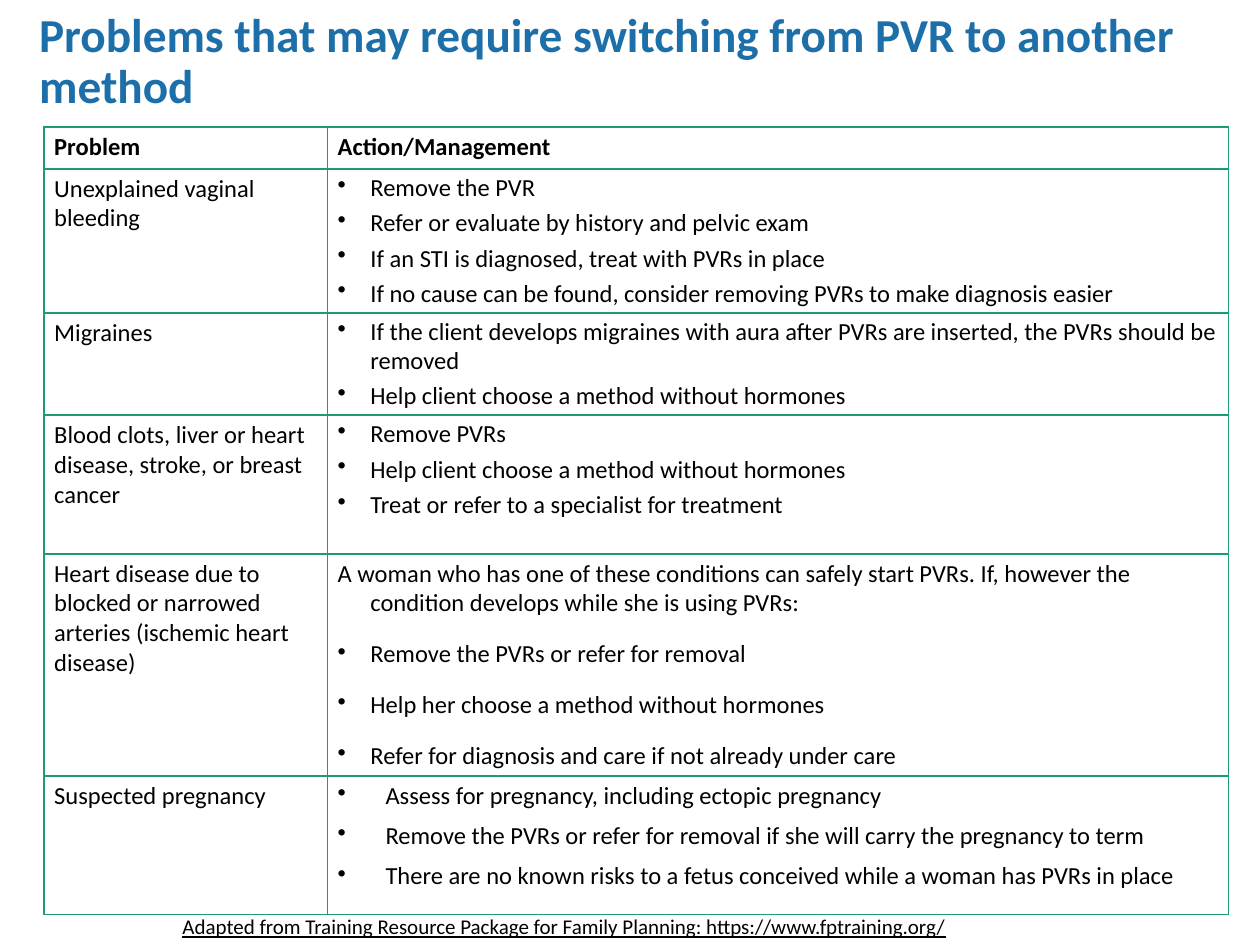
from dataclasses import dataclass

from lxml import etree
from pptx import Presentation
from pptx.dml.color import RGBColor
from pptx.enum.text import MSO_ANCHOR
from pptx.oxml.ns import qn
from pptx.util import Inches, Pt

TOP = MSO_ANCHOR.TOP
MIDDLE = MSO_ANCHOR.MIDDLE


@dataclass(frozen=True)
class Theme:
    font: str = "Calibri"
    title: str = "1D6FA9"
    ink: str = "000000"
    line: str = "1D9A78"
    head: int = 27
    body: int = 14
    note: int = 12
    rule: int = 1


THEME = Theme()
WIDE, HIGH = Inches(10), Inches(7.5)
COLS, ROWS = 100, 75

TITLE = "Problems that may require switching from PVR to another method"
NOTE = "Adapted from Training Resource Package for Family Planning: https://www.fptraining.org/"
HEADS = ("Problem", "Action/Management")
TIGHT = dict(gap=4, indent=0.26, lead=0.95)
LOOSE = dict(gap=12, indent=0.26)
DEEP = dict(gap=6, indent=0.38)
CASES = [
    (9.4, "Unexplained vaginal bleeding", "", TIGHT, [
        "Remove the PVR",
        "Refer or evaluate by history and pelvic exam",
        "If an STI is diagnosed, treat with PVRs in place",
        "If no cause can be found, consider removing PVRs to make diagnosis easier",
    ]),
    (7, "Migraines", "", TIGHT, [
        "If the client develops migraines with aura after PVRs are inserted, the PVRs should be removed",
        "Help client choose a method without hormones",
    ]),
    (11, "Blood clots, liver or heart disease, stroke, or breast cancer", "", TIGHT, [
        "Remove PVRs",
        "Help client choose a method without hormones",
        "Treat or refer to a specialist for treatment",
    ]),
    (11, "Heart disease due to blocked or narrowed arteries (ischemic heart disease)",
     "A woman who has one of these conditions can safely start PVRs. "
     "If, however the condition develops while she is using PVRs:", LOOSE, [
         "Remove the PVRs or refer for removal",
         "Help her choose a method without hormones",
         "Refer for diagnosis and care if not already under care",
     ]),
    (11, "Suspected pregnancy", "", DEEP, [
        "Assess for pregnancy, including ectopic pregnancy",
        "Remove the PVRs or refer for removal if she will carry the pregnancy to term",
        "There are no known risks to a fetus conceived while a woman has PVRs in place",
    ]),
]


def across(cols):
    return round(WIDE * cols / COLS)


def down(rows):
    return round(HIGH * rows / ROWS)


def place(box):
    left, top, width, height = box
    return across(left), down(top), across(width), down(height)


def paint(parent, tag, color):
    node = etree.SubElement(parent, qn(tag))
    etree.SubElement(node, qn("a:srgbClr"), val=color)


def write(frame, text, first=True, size=THEME.body, color=THEME.ink, bold=False,
          under=False, bullet=False, indent=0, gap=0, lead=None):
    para = frame.paragraphs[0] if first else frame.add_paragraph()
    props = para._p.get_or_add_pPr()
    if indent:
        props.set("marL", str(Inches(indent)))
        props.set("indent", str(-Inches(indent)))
    if bullet:
        paint(props, "a:buClr", THEME.ink)
        etree.SubElement(props, qn("a:buChar"), char="•")
    if lead:
        para.line_spacing = lead
    if gap and not first:
        para.space_before = Pt(gap)
    run = para.add_run()
    run.text = text
    font = run.font
    font.name, font.size = THEME.font, Pt(size)
    font.bold, font.underline = bold, under
    font.color.rgb = RGBColor.from_string(color)


def label(slide, box, text, anchor=TOP, inset=None, **style):
    frame = slide.shapes.add_textbox(*place(box)).text_frame
    frame.word_wrap = True
    frame.vertical_anchor = anchor
    if inset:
        frame.margin_left = frame.margin_right = Inches(inset[0])
        frame.margin_top = frame.margin_bottom = Inches(inset[1])
    write(frame, text, **style)


def border(cell):
    props = cell._tc.get_or_add_tcPr()
    for side in "LRTB":
        edge = etree.SubElement(props, qn(f"a:ln{side}"), w=str(Pt(THEME.rule)))
        paint(edge, "a:solidFill", THEME.line)
    cell.fill.background()
    cell.margin_left = Inches(0.08)
    cell.margin_right = cell.margin_top = cell.margin_bottom = Inches(0.04)


def chart_cases(slide, box, widths, head):
    frame = slide.shapes.add_table(len(CASES) + 1, len(HEADS), *place(box))
    table = frame.table
    table.horz_banding = False
    for col, width in zip(table.columns, widths):
        col.width = across(width)
    heights = [head] + [case[0] for case in CASES]
    for row, height in zip(table.rows, heights):
        row.height = down(height)
    for cell in table.iter_cells():
        border(cell)
    for col, text in enumerate(HEADS):
        write(table.cell(0, col).text_frame, text, bold=True)
    for row, (_, name, intro, style, steps) in enumerate(CASES, 1):
        write(table.cell(row, 0).text_frame, name)
        body = table.cell(row, 1).text_frame
        if intro:
            write(body, intro, **style)
        for num, step in enumerate(steps):
            write(body, step, first=not (intro or num), bullet=True, **style)


def main():
    deck = Presentation()
    deck.slide_width, deck.slide_height = WIDE, HIGH
    slide = deck.slides.add_slide(deck.slide_layouts[6])
    chart_cases(slide, (3.5, 10.1, 94.1, 61.9), (22.5, 71.5), 3.3)
    label(slide, (2.4, 0.3, 95.5, 9.4), TITLE, MIDDLE, (0.07, 0.04),
          size=THEME.head, color=THEME.title, bold=True, lead=0.9)
    label(slide, (13.5, 72, 69.4, 2.7), NOTE, size=THEME.note, under=True)
    deck.save("out.pptx")


if __name__ == "__main__":
    main()
